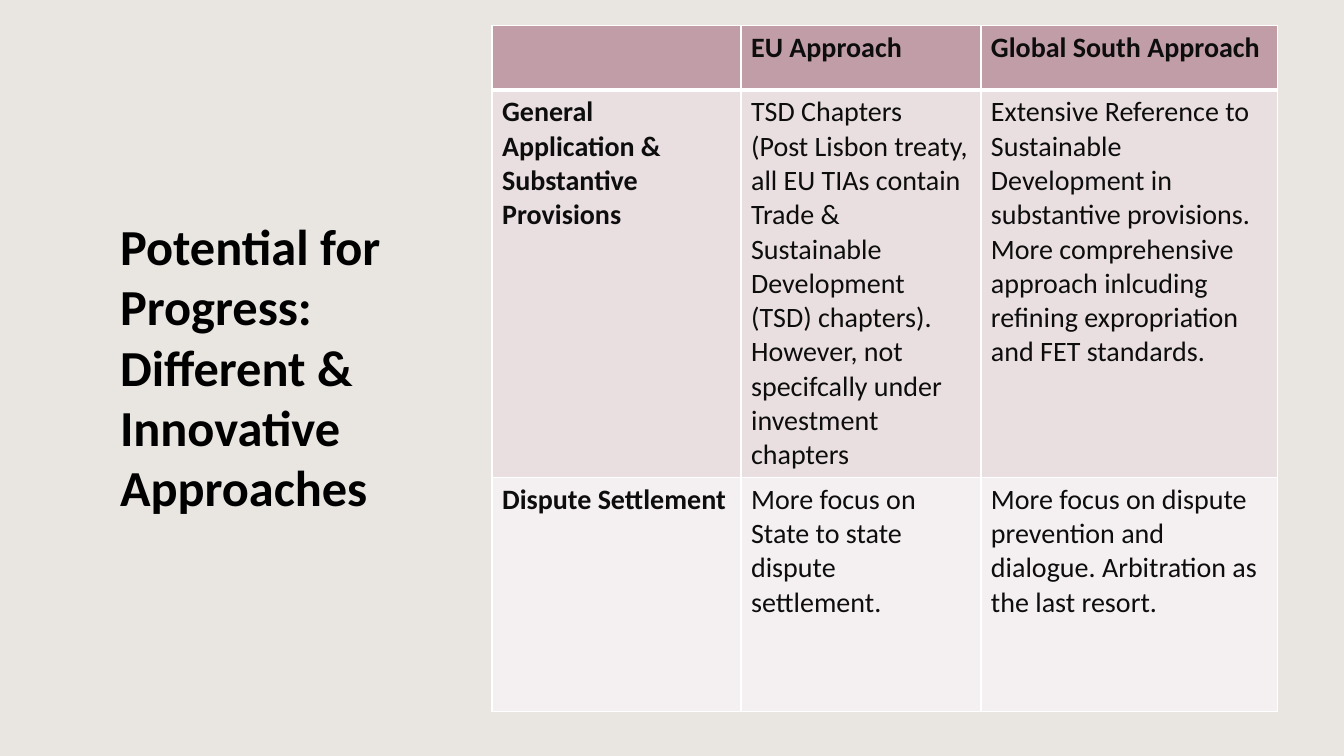
from dataclasses import dataclass

from lxml import etree
from pptx import Presentation, util as u
from pptx.dml.color import RGBColor
from pptx.enum import text
from pptx.oxml import ns

WIDTH, HEIGHT = u.Inches(13.33), u.Inches(7.5)
FONT = "Calibri"
COLOURS = {
    "page": "E9E5E1",
    "title": "000000",
    "text": "0D0D0D",
    "header": "C19DA7",
    "band": "E9DFE1",
    "plain": "F4EFF1",
    "border": "FFFFFF",
}


@dataclass(frozen=True)
class Row:
    height: float  # percent of the slide height
    fill: str
    top_border: int  # points
    bottom_border: int
    cells: tuple[tuple[str, ...], ...]  # paragraphs of each cell


COLUMN_WIDTHS = (18.53, 17.85, 22.06)  # percent of the slide width
ROWS = (
    Row(8.53, "header", 1, 3, ((), ("EU Approach",), ("Global South Approach",))),
    Row(46.13, "band", 3, 1, (
        ("General Application & Substantive Provisions",),
        ("TSD Chapters",
         "(Post Lisbon treaty, all EU TIAs contain Trade & Sustainable Development "
         "(TSD) chapters). However, not specifcally under investment chapters"),
        ("Extensive Reference to Sustainable Development in substantive provisions.",
         "More comprehensive approach inlcuding refining expropriation and FET standards."),
    )),
    Row(30.93, "plain", 1, 1, (
        ("Dispute Settlement",),
        ("More focus on State to state dispute settlement.",),
        ("More focus on dispute prevention and dialogue. Arbitration as the last resort.",),
    )),
)


def across(percent: float) -> int:
    return round(WIDTH * percent / 100)


def down(percent: float) -> int:
    return round(HEIGHT * percent / 100)


def add_span(para, words: str, size: int, colour: str, bold: bool) -> None:
    span = para.add_run()
    span.text = words
    span.font.name = FONT
    span.font.size = u.Pt(size)
    span.font.bold = bold
    span.font.color.rgb = RGBColor.from_string(COLOURS[colour])


def add_title(page) -> None:
    box = page.shapes.title
    box.left, box.top = across(8.18), down(7.73)
    box.width, box.height = across(27.53), down(81.33)
    frame = box.text_frame
    frame.word_wrap = True
    frame.auto_size = text.MSO_AUTO_SIZE.NONE
    frame.vertical_anchor = text.MSO_ANCHOR.MIDDLE
    para = frame.paragraphs[0]
    para.alignment = text.PP_ALIGN.LEFT
    add_span(para, "Potential for Progress: Different & Innovative Approaches",
             36, "title", True)


def add_borders(cell, row: Row) -> None:
    properties = cell._tc.get_or_add_tcPr()
    widths = {"L": 1, "R": 1, "T": row.top_border, "B": row.bottom_border}
    for side, points in widths.items():
        line = etree.SubElement(properties, ns.qn(f"a:ln{side}"), w=str(u.Pt(points)))
        fill = etree.SubElement(line, ns.qn("a:solidFill"))
        etree.SubElement(fill, ns.qn("a:srgbClr"), val=COLOURS["border"])


def fill_cell(cell, row: Row, paragraphs: tuple[str, ...], bold: bool) -> None:
    add_borders(cell, row)
    cell.fill.solid()
    cell.fill.fore_color.rgb = RGBColor.from_string(COLOURS[row.fill])
    frame = cell.text_frame
    for index, words in enumerate(paragraphs):
        para = frame.add_paragraph() if index else frame.paragraphs[0]
        add_span(para, words, 20, "text", bold)


def add_comparison(page) -> None:
    table = page.shapes.add_table(
        len(ROWS), len(COLUMN_WIDTHS), across(36.61), down(3.4),
        across(sum(COLUMN_WIDTHS)), down(sum(row.height for row in ROWS)),
    ).table
    for column, width in zip(table.columns, COLUMN_WIDTHS):
        column.width = across(width)
    for r, row in enumerate(ROWS):
        table.rows[r].height = down(row.height)
        for c, paragraphs in enumerate(row.cells):
            fill_cell(table.cell(r, c), row, paragraphs, bold=r == 0 or c == 0)


def main() -> None:
    deck = Presentation()
    deck.slide_width, deck.slide_height = WIDTH, HEIGHT
    page = deck.slides.add_slide(deck.slide_layouts.get_by_name("Title Only"))
    page.background.fill.solid()
    page.background.fill.fore_color.rgb = RGBColor.from_string(COLOURS["page"])
    add_title(page)
    add_comparison(page)
    deck.save("out.pptx")


if __name__ == "__main__":
    main()
